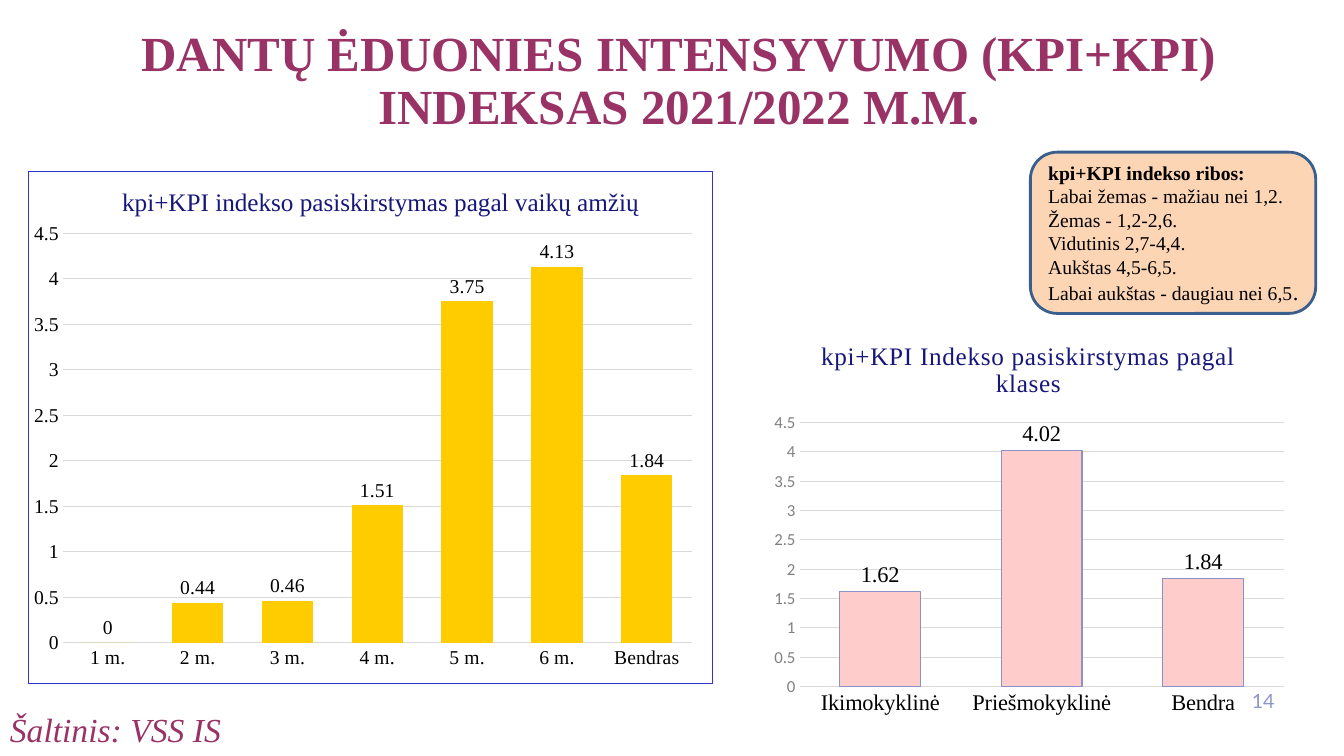
from lxml import etree
from pptx import Presentation
from pptx.chart.data import CategoryChartData
from pptx.dml.color import RGBColor
from pptx.enum.chart import XL_CHART_TYPE as ChartType, XL_LABEL_POSITION as LabelPosition
from pptx.enum.chart import XL_TICK_MARK as TickMark
from pptx.enum.shapes import MSO_SHAPE as Shape
from pptx.enum.text import MSO_ANCHOR as Anchor, MSO_AUTO_SIZE as AutoSize, PP_ALIGN as Align
from pptx.oxml import parse_xml
from pptx.oxml.ns import nsdecls, qn
from pptx.util import Inches, Pt

SERIF = "Times New Roman"
PLUM, NAVY, BLACK, GRID = "993366", "17177B", "000000", "D9D9D9"


def color(hex_code):
    return RGBColor.from_string(hex_code)


def set_font(font, size, hex_code=BLACK, name=SERIF, bold=False, italic=False):
    font.size, font.name = Pt(size), name
    font.bold, font.italic = bold, italic
    font.color.rgb = color(hex_code)


def set_line(line, hex_code, width=0.75):
    line.color.rgb = color(hex_code)
    line.width = Pt(width)


class SlideBuilder:
    def __init__(self, presentation):
        self.slide = presentation.slides.add_slide(presentation.slide_layouts[5])

    def title(self, text, box):
        shape = self.slide.shapes.title
        shape.left, shape.top, shape.width, shape.height = map(Inches, box)
        frame = shape.text_frame
        frame.text = text
        frame.word_wrap, frame.auto_size = True, AutoSize.NONE
        frame.vertical_anchor = Anchor.BOTTOM
        paragraph = frame.paragraphs[0]
        paragraph.alignment, paragraph.line_spacing = Align.CENTER, 0.9
        set_font(paragraph.runs[0].font, 35, PLUM, bold=True)

    def text(self, text, box, size, hex_code, align=Align.LEFT, **style):
        frame = self.slide.shapes.add_textbox(*map(Inches, box)).text_frame
        frame.text = text
        frame.word_wrap = True
        paragraph = frame.paragraphs[0]
        paragraph.alignment = align
        set_font(paragraph.runs[0].font, size, hex_code, **style)

    def note(self, heading, lines, ending, box):
        shape = self.slide.shapes.add_shape(Shape.ROUNDED_RECTANGLE, *map(Inches, box))
        shape.shadow.inherit = False
        shape.fill.solid()
        shape.fill.fore_color.rgb = color("FCD5B5")
        set_line(shape.line, "3A5F8C", 2)
        frame = shape.text_frame
        frame.text = "\n".join([heading, *lines])
        frame.word_wrap, frame.vertical_anchor = True, Anchor.MIDDLE
        frame.margin_right = frame.margin_top = frame.margin_bottom = 0
        for index, paragraph in enumerate(frame.paragraphs):
            paragraph.alignment = Align.LEFT
            set_font(paragraph.runs[0].font, 14, bold=index == 0)
        last_run = frame.paragraphs[-1].add_run()
        last_run.text = ending
        set_font(last_run.font, 16)

    def column_chart(self, title, values, box, plot, fill, gap, overlap, label_size,
                     value_font, outline=None, border=None, spacing=0, title_at=None):
        data = CategoryChartData()
        data.categories = list(values)
        data.add_series("Series 1", list(values.values()))
        chart = self.slide.shapes.add_chart(
            ChartType.COLUMN_CLUSTERED, *map(Inches, box), data).chart
        set_font(chart.font, 10, name="Calibri")
        chart.has_legend = False

        # Chart title
        chart.has_title = True
        chart.chart_title.include_in_layout = False
        title_frame = chart.chart_title.text_frame
        title_frame.text = title
        title_run = title_frame.paragraphs[0].runs[0]
        set_font(title_run.font, 18, NAVY)
        title_run._r.get_or_add_rPr().set("spc", str(spacing))

        # Axes
        category_axis, value_axis = chart.category_axis, chart.value_axis
        for axis in (category_axis, value_axis):
            axis.major_tick_mark = axis.minor_tick_mark = TickMark.NONE
        set_font(category_axis.tick_labels.font, label_size)
        set_line(category_axis.format.line, GRID)
        set_font(value_axis.tick_labels.font, *value_font)
        value_axis.format.line.fill.background()
        set_line(value_axis.major_gridlines.format.line, GRID)
        value_axis.minimum_scale, value_axis.maximum_scale = 0, 4.5
        value_axis.major_unit = 0.5

        # Columns and their labels
        columns = chart.plots[0]
        columns.gap_width, columns.overlap = gap, overlap
        columns.vary_by_categories = False
        series = columns.series[0]
        series.format.fill.solid()
        series.format.fill.fore_color.rgb = color(fill)
        if outline:
            set_line(series.format.line, outline)
        labels = series.data_labels
        labels.show_value, labels.position = True, LabelPosition.OUTSIDE_END
        set_font(labels.font, label_size)

        # Places inside the chart, and its frame
        chart_part = chart.element.find(qn("c:chart"))
        self.place(chart_part.find(qn("c:plotArea")), 0, plot, [("layoutTarget", "inner")])
        if title_at:
            self.place(chart_part.find(qn("c:title")), 1, title_at)
        if border:
            chart_part.addnext(parse_xml(
                f'<c:spPr {nsdecls("c", "a")}><a:noFill/><a:ln w="{Pt(0.75)}"><a:solidFill>'
                f'<a:srgbClr val="{border}"/></a:solidFill></a:ln></c:spPr>'))

    def place(self, element, index, position, target=()):
        for old_layout in element.findall(qn("c:layout")):
            element.remove(old_layout)
        layout = parse_xml(f'<c:layout {nsdecls("c")}><c:manualLayout/></c:layout>')
        settings = [*target, ("xMode", "edge"), ("yMode", "edge"), *zip("xywh", position)]
        for tag, value in settings:
            etree.SubElement(layout[0], qn(f"c:{tag}")).set("val", str(value))
        element.insert(index, layout)


def main():
    presentation = Presentation()
    presentation.slide_width, presentation.slide_height = Inches(13.33), Inches(7.5)
    builder = SlideBuilder(presentation)

    # Title and source
    builder.title("DANTŲ ĖDUONIES INTENSYVUMO (KPI+KPI) INDEKSAS 2021/2022 M.M.",
                  (0.28, -0.3, 12.92, 1.69))
    builder.text("Šaltinis: VSS IS", (0, 6.98, 6.3, 0.38), 24, PLUM, italic=True)

    # Index limits
    builder.note("kpi+KPI indekso ribos:",
                 ["Labai žemas - mažiau nei 1,2.", "Žemas - 1,2-2,6.", "Vidutinis 2,7-4,4.",
                  "Aukštas 4,5-6,5.", "Labai aukštas - daugiau nei 6,5"], ".",
                 (10.22, 1.51, 2.83, 1.6))

    # Index by age and by class
    builder.column_chart(
        "kpi+KPI indekso pasiskirstymas pagal vaikų amžių",
        {"1 m.": 0, "2 m.": 0.44, "3 m.": 0.46, "4 m.": 1.51, "5 m.": 3.75, "6 m.": 4.13,
         "Bendras": 1.84},
        (0.28, 1.7, 6.79, 5.09), (0.05, 0.12, 0.92, 0.8), "FFCC00", 75, -25, 14,
        (14, BLACK), border="2E34D0", title_at=(0.13, 0.02))
    builder.column_chart(
        "kpi+KPI Indekso pasiskirstymas pagal klases",
        {"Ikimokyklinė": 1.62, "Priešmokyklinė": 4.02, "Bendra": 1.84},
        (7.56, 3.2, 5.28, 3.97), (0.07, 0.25, 0.91, 0.66), "FFCCCC", 100, -24, 16,
        (12, "808080", "Calibri"), outline="8A92C8", spacing=50)

    # Page number
    builder.text("14", (12.22, 6.79, 0.52, 0.4), 14, "8E96CD", Align.RIGHT, name="Lato")

    presentation.save("out.pptx")


if __name__ == "__main__":
    main()
